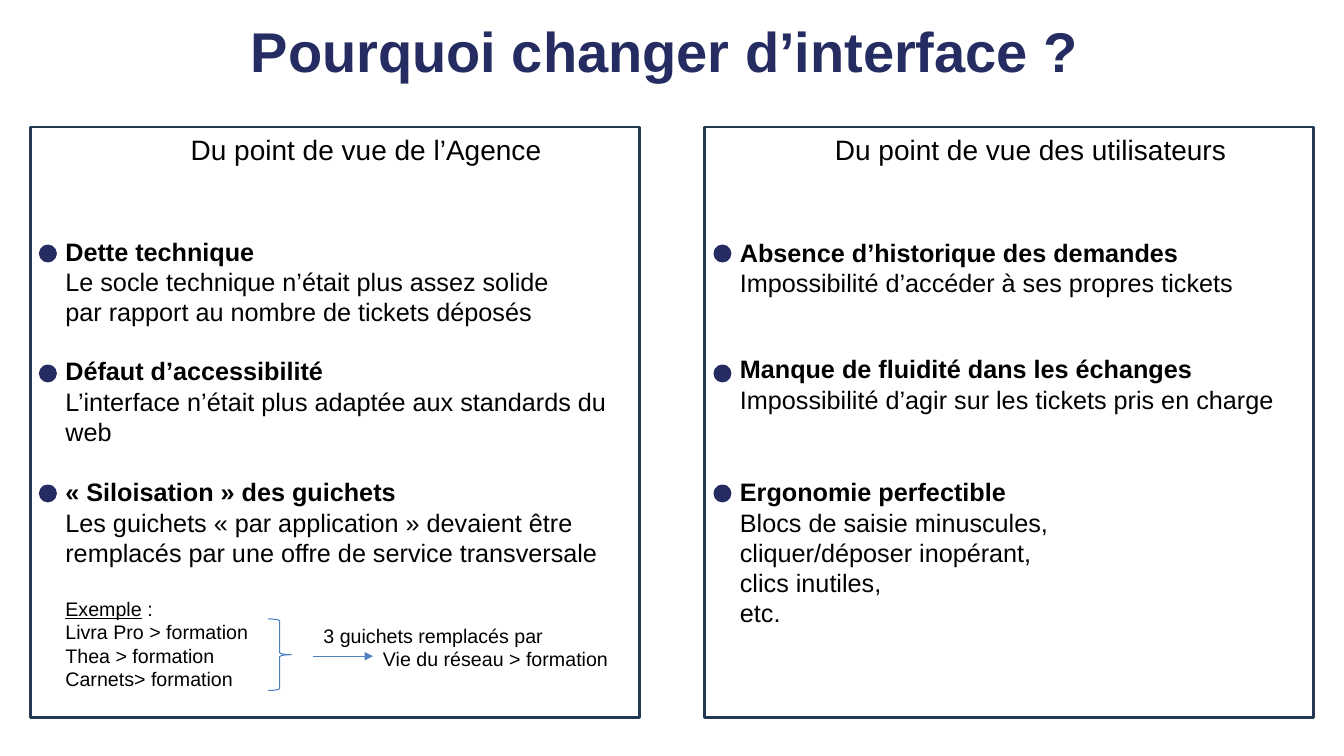
"""Builds the slide comparing two viewpoints on why the interface changed."""
import dataclasses
import pptx
import pptx.dml.color
import pptx.enum.shapes
import pptx.enum.text
import pptx.oxml
import pptx.oxml.ns
import pptx.util

Inches = pptx.util.Inches
Shape = pptx.enum.shapes.MSO_SHAPE
Align = pptx.enum.text.PP_ALIGN
Anchor = pptx.enum.text.MSO_ANCHOR
rgb = pptx.dml.color.RGBColor.from_string


@dataclasses.dataclass(frozen=True)
class Theme:
    font: str = "Arial"
    navy: str = "252C61"
    frame: str = "233953"
    arrow: str = "4F81BD"
    brace: str = "4B7EBC"
    ink: str = "000000"
    title: int = 40
    head: int = 20
    body: int = 18
    note: int = 14
    thick: float = 2
    thin: float = 0.75


theme = Theme()


def write(para, text, size, bold=False, under=False, color=theme.ink):
    for i, line in enumerate(text.split("\n")):
        if i:
            para.add_line_break()
        if line:
            run = para.add_run()
            run.text = line
            font = run.font
            font.name, font.size = theme.font, pptx.util.Pt(size)
            font.bold, font.underline = bold, under
            font.color.rgb = rgb(color)


def draw(kind, box, color, width, fill=None):
    shape = slide.shapes.add_shape(kind, *map(Inches, box))
    shape.shadow.inherit = False
    shape.line.color.rgb = rgb(color)
    shape.line.width = pptx.util.Pt(width)
    if fill:
        shape.fill.solid()
        shape.fill.fore_color.rgb = rgb(fill)
    else:
        shape.fill.background()


deck = pptx.Presentation()
deck.slide_width, deck.slide_height = Inches(13.33), Inches(7.5)
slide = deck.slides.add_slide(deck.slide_layouts.get_by_name("Comparison"))
holders = {h.placeholder_format.idx: h for h in slide.placeholders}
for idx in set(holders) - {0, 1, 3}:
    spare = holders[idx].element
    spare.getparent().remove(spare)

heads = [
    (0, (2.29, 0.11, 8.6, 0.77), "Pourquoi changer d’interface ?",
     theme.title, True, theme.navy, Align.CENTER),
    (1, (1.79, 1.26, 3.71, 0.44), "Du point de vue de l’Agence",
     theme.head, False, theme.ink, Align.LEFT),
    (3, (8.18, 1.26, 4.11, 0.44), "Du point de vue des utilisateurs",
     theme.head, False, theme.ink, Align.LEFT),
]
for idx, box, text, size, bold, color, align in heads:
    head = holders[idx]
    head.left, head.top, head.width, head.height = map(Inches, box)
    frame = head.text_frame
    frame.auto_size = pptx.enum.text.MSO_AUTO_SIZE.NONE
    frame.vertical_anchor = Anchor.TOP
    para = frame.paragraphs[0]
    para.alignment = align
    para.space_before = pptx.util.Pt(0)
    write(para, text, size, bold, color=color)

panels = [
    (0.3, [
        (2.29, 1.01, "Dette technique",
         "Le socle technique n’était plus assez solide\n"
         "par rapport au nombre de tickets déposés"),
        (3.48, 1.01, "Défaut d’accessibilité",
         "L’interface n’était plus adaptée aux standards du web"),
        (4.68, 2.3, "« Siloisation » des guichets",
         "Les guichets « par application » devaient être "
         "remplacés par une offre de service transversale"),
    ]),
    (6.99, [
        (2.3, 0.71, "Absence d’historique des demandes",
         "Impossibilité d’accéder à ses propres tickets"),
        (3.46, 0.71, "Manque de fluidité dans les échanges",
         "Impossibilité d’agir sur les tickets pris en charge"),
        (4.68, 1.62, "Ergonomie perfectible",
         "Blocs de saisie minuscules,\ncliquer/déposer inopérant,\n"
         "clics inutiles,\netc."),
    ]),
]
frames = []
for left, items in panels:
    draw(Shape.RECTANGLE, (left, 1.26, 6.04, 5.86), theme.frame, theme.thick)
    for row, (top, high, name, text) in enumerate(items):
        draw(Shape.OVAL, (left + 0.1, 2.44 + 1.19 * row, 0.15, 0.15),
             theme.navy, theme.thick, theme.navy)
        box = slide.shapes.add_textbox(
            *map(Inches, (left + 0.25, top, 5.79, high)))
        frame = box.text_frame
        frame.word_wrap = True
        para = frame.paragraphs[0]
        write(para, name + "\n", theme.body, True)
        write(para, text, theme.body)
        frames.append(frame)

para = frames[2].add_paragraph()
para.space_before = pptx.util.Pt(21)
write(para, "Exemple", theme.note, under=True)
write(para, " :\nLivra Pro > formation\nThea > formation\nCarnets> formation",
      theme.note)

draw(Shape.RIGHT_BRACE, (2.66, 6.14, 0.23, 0.71), theme.brace, theme.thin)
arrow = slide.shapes.add_connector(
    pptx.enum.shapes.MSO_CONNECTOR.STRAIGHT,
    *map(Inches, (3.1, 6.51, 3.7, 6.51)))
arrow.line.color.rgb = rgb(theme.arrow)
arrow.line.width = pptx.util.Pt(theme.thin)
tip = pptx.oxml.parse_xml(
    '<a:tailEnd %s type="triangle"/>' % pptx.oxml.ns.nsdecls("a"))
arrow.line._get_or_add_ln().append(tip)
arrow.element.spPr.append(pptx.oxml.parse_xml(
    "<a:effectLst %s/>" % pptx.oxml.ns.nsdecls("a")))

box = slide.shapes.add_textbox(*map(Inches, (3.11, 6.14, 3.2, 0.57)))
frame = box.text_frame
frame.word_wrap = True
write(frame.paragraphs[0], "3 guichets remplacés par", theme.note)
para = frame.add_paragraph()
para._p.get_or_add_pPr().set("marL", str(Inches(0.59)))
write(para, "Vie du réseau > formation", theme.note)

deck.save("out.pptx")
